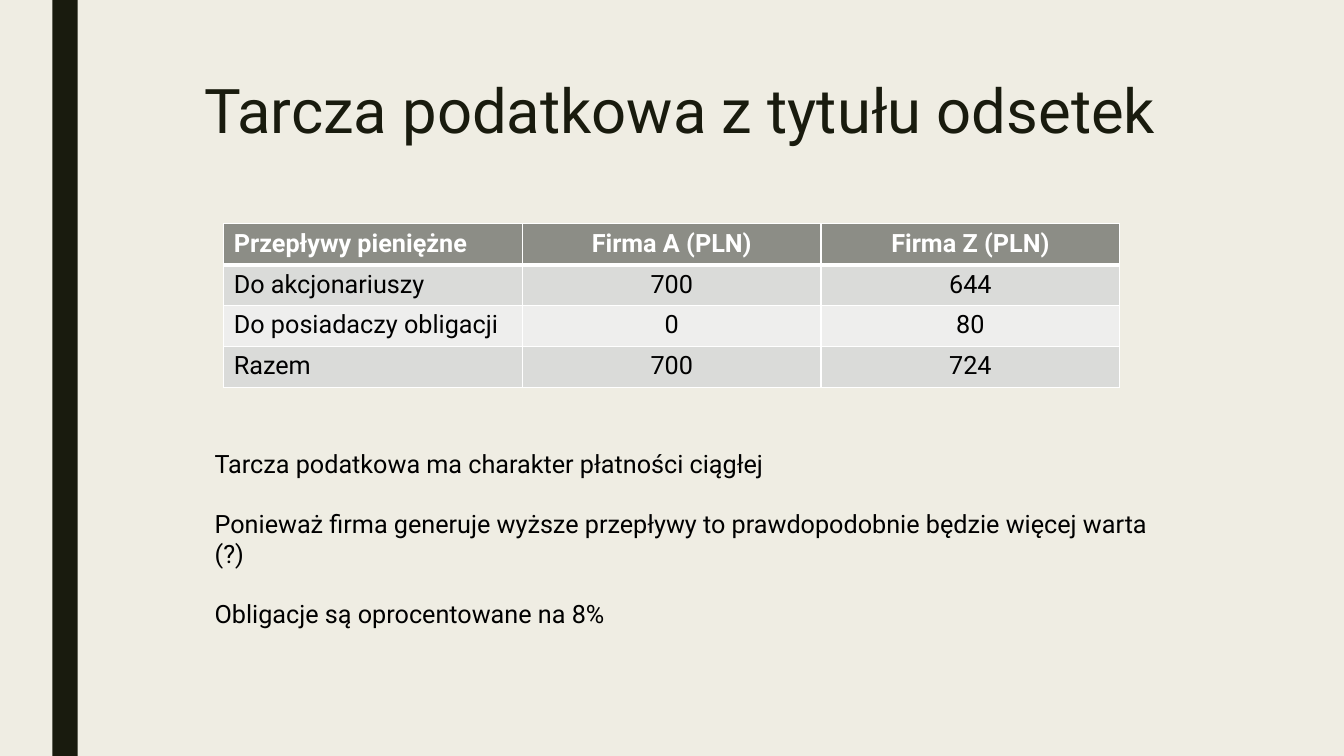
from lxml import etree
from pptx import Presentation
from pptx.dml.color import RGBColor
from pptx.enum.shapes import MSO_SHAPE
from pptx.enum.text import MSO_ANCHOR, PP_ALIGN
from pptx.oxml.ns import qn
from pptx.util import Cm, Pt

RECT = MSO_SHAPE.RECTANGLE
TOP = MSO_ANCHOR.TOP
LEFT, CENTER = PP_ALIGN.LEFT, PP_ALIGN.CENTER

CREAM = RGBColor(0xEF, 0xED, 0xE3)
DARK = RGBColor(0x19, 0x1B, 0x0E)
BLACK = RGBColor(0, 0, 0)
WHITE = RGBColor(0xFF, 0xFF, 0xFF)
HEAD = RGBColor(0x8C, 0x8D, 0x86)
BANDS = RGBColor(0xDA, 0xDB, 0xD9), RGBColor(0xEE, 0xEE, 0xED)

FONT = "Roboto"
TITLE = "Tarcza podatkowa z tytułu odsetek"
FLOWS = [
    ("Przepływy pieniężne", "Firma A (PLN)", "Firma Z (PLN)"),
    ("Do akcjonariuszy", "700", "644"),
    ("Do posiadaczy obligacji", "0", "80"),
    ("Razem", "700", "724"),
]
NOTES = [
    "Tarcza podatkowa ma charakter płatności ciągłej",
    "Ponieważ firma generuje wyższe przepływy to prawdopodobnie będzie więcej warta (?)",
    "Obligacje są oprocentowane na 8%",
]


def write(frame, lines, size=18, color=BLACK, bold=False, align=LEFT, after=0, spacing=1.0):
    """Fill a text frame with one paragraph per line."""
    frame.word_wrap = True
    for i, line in enumerate(lines):
        para = frame.add_paragraph() if i else frame.paragraphs[0]
        para.alignment = align
        para.space_before = Pt(0)
        para.space_after = Pt(after)
        para.line_spacing = spacing
        run = para.add_run()
        run.text = line
        font = run.font
        font.name, font.size, font.bold = FONT, Pt(size), bold
        font.color.rgb = color


def add_bar(slide):
    bar = slide.shapes.add_shape(RECT, Cm(1.32), 0, Cm(0.64), Cm(19.05))
    bar.shadow.inherit = False
    bar.fill.solid()
    bar.fill.fore_color.rgb = DARK
    bar.line.fill.background()


def set_title(slide):
    title = slide.shapes.title
    title.left, title.top = Cm(3.81), Cm(1.9)
    title.width, title.height = Cm(26.67), Cm(4.11)
    title.text_frame.vertical_anchor = TOP
    write(title.text_frame, [TITLE], size=44, color=DARK, align=CENTER, spacing=0.89)


def add_edges(cell, **widths):
    """Draw white cell borders, with widths in points keyed by side."""
    props = cell._tc.get_or_add_tcPr()
    for side, width in widths.items():
        edge = etree.SubElement(props, qn(f"a:ln{side}"), w=str(Pt(width)))
        fill = etree.SubElement(edge, qn("a:solidFill"))
        etree.SubElement(fill, qn("a:srgbClr"), val=str(WHITE))


def add_flows(slide):
    frame = slide.shapes.add_table(
        len(FLOWS), len(FLOWS[0]), Cm(5.64), Cm(5.64), Cm(22.58), Cm(4.12))
    for r, row in enumerate(FLOWS):
        top = r == 0
        for c, text in enumerate(row):
            cell = frame.table.cell(r, c)
            add_edges(cell, L=1, R=1, T=3 if r == 1 else 1, B=3 if top else 1)
            cell.fill.solid()
            cell.fill.fore_color.rgb = HEAD if top else BANDS[(r - 1) % 2]
            write(cell.text_frame, [text], color=WHITE if top else BLACK,
                  bold=top, align=CENTER if c else LEFT)


def add_notes(slide):
    box = slide.shapes.add_textbox(Cm(5.16), Cm(11.18), Cm(24.5), Cm(4.9))
    write(box.text_frame, NOTES, after=21)


def main():
    deck = Presentation()
    deck.slide_width, deck.slide_height = Cm(33.87), Cm(19.05)
    slide = deck.slides.add_slide(deck.slide_layouts.get_by_name("Title Only"))
    slide.background.fill.solid()
    slide.background.fill.fore_color.rgb = CREAM
    add_bar(slide)
    set_title(slide)
    add_flows(slide)
    add_notes(slide)
    deck.save("out.pptx")


if __name__ == "__main__":
    main()
